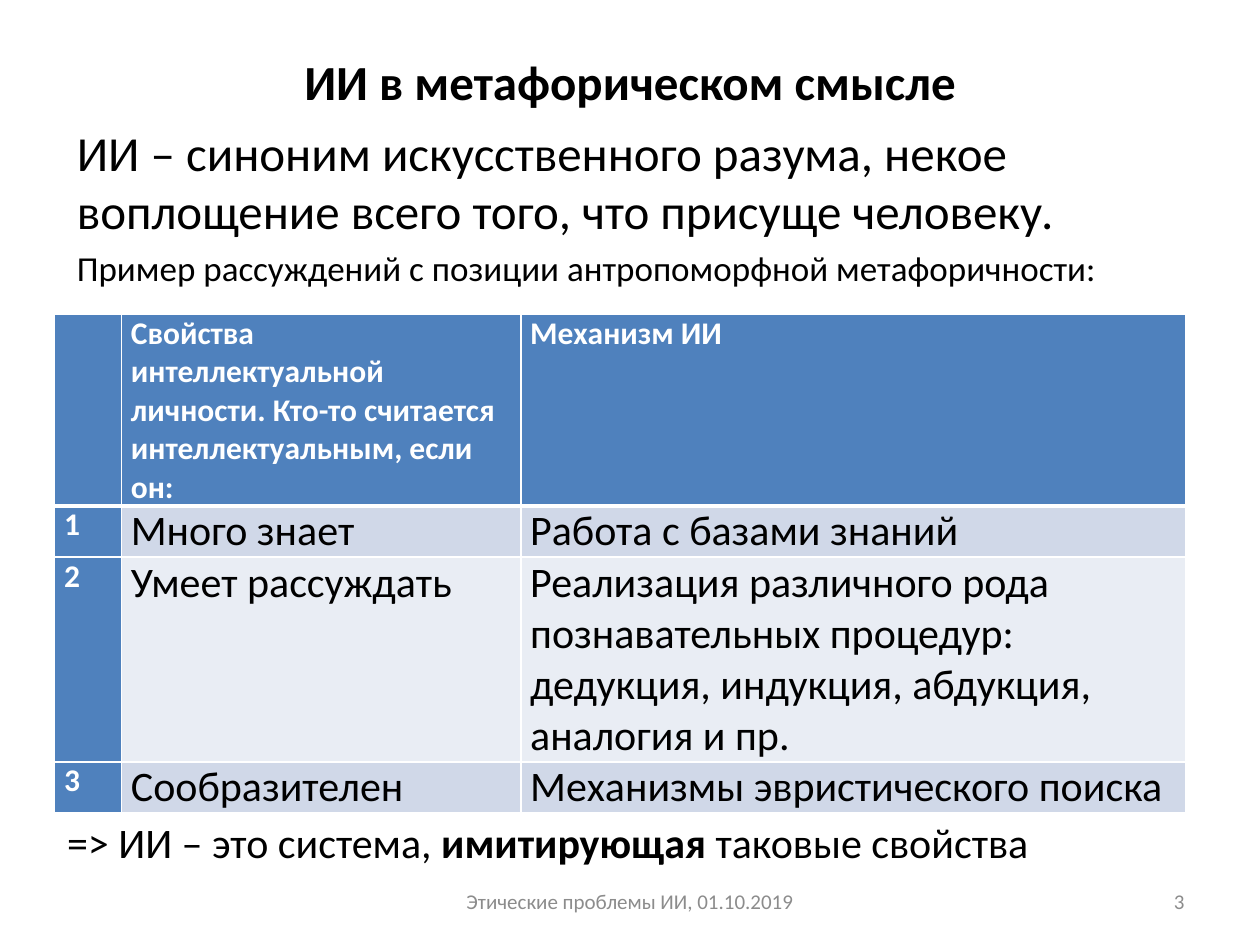
from lxml import etree
from pptx import Presentation
from pptx import util as u
from pptx.dml import color
from pptx.enum import text
from pptx.oxml import ns

FONT = "Calibri"
BLACK, WHITE, GREY, BLUE = "000000", "FFFFFF", "8C8C8C", "4F81BD"
BANDS = ("D0D8E8", "E9EDF4")
COLUMNS = (38.2, 228.2, 380)
ROWS = (
    (109.5, ("", "Свойства интеллектуальной личности. Кто-то считается интеллектуальным, если он:",
             "Механизм ИИ")),
    (29.3, ("1", "Много знает", "Работа с базами знаний")),
    (117, ("2", "Умеет рассуждать",
           "Реализация различного рода познавательных процедур: дедукция, индукция, "
           "абдукция, аналогия и пр.")),
    (29.3, ("3", "Сообразителен", "Механизмы эвристического поиска")),
)


def rgb(value):
    return color.RGBColor.from_string(value)


def add_run(p, content, size, fill=BLACK, bold=False):
    r = p.add_run()
    r.text = content
    r.font.name = FONT
    r.font.size = u.Pt(size)
    r.font.bold = bold
    r.font.color.rgb = rgb(fill)


def place(sp, left, top, width, height):
    sp.left, sp.top, sp.width, sp.height = map(u.Pt, (left, top, width, height))


def add_title(s, content):
    sp = s.shapes.title
    place(sp, 36, 21.6, 648, 49.7)
    tf = sp.text_frame
    tf.auto_size = text.MSO_AUTO_SIZE.NONE
    tf.vertical_anchor = text.MSO_ANCHOR.MIDDLE
    p = tf.paragraphs[0]
    p.alignment = text.PP_ALIGN.CENTER
    add_run(p, content, 28, bold=True)


def add_body(s, lines):
    sp = s.placeholders[1]
    place(sp, 36.7, 66.2, 648, 108)
    tf = sp.text_frame
    tf.auto_size = text.MSO_AUTO_SIZE.NONE
    for i, (content, size) in enumerate(lines):
        p = tf.add_paragraph() if i else tf.paragraphs[0]
        pPr = p._p.get_or_add_pPr()
        pPr.set("marL", "0")
        pPr.set("indent", "0")
        etree.SubElement(pPr, ns.qn("a:buNone"))
        add_run(p, content, size)


def add_text(s, box, runs, size, fill=BLACK, align=text.PP_ALIGN.LEFT,
             anchor=text.MSO_ANCHOR.TOP):
    tf = s.shapes.add_textbox(*map(u.Pt, box)).text_frame
    tf.word_wrap = True
    tf.vertical_anchor = anchor
    p = tf.paragraphs[0]
    p.alignment = align
    for content, bold in runs:
        add_run(p, content, size, fill, bold)


def set_borders(cell, widths):
    tcPr = cell._tc.get_or_add_tcPr()
    for i, (side, width) in enumerate(zip("LRTB", widths)):
        ln = etree.Element(ns.qn(f"a:ln{side}"), w=str(u.Pt(width)))
        solid = etree.SubElement(ln, ns.qn("a:solidFill"))
        etree.SubElement(solid, ns.qn("a:srgbClr"), val=WHITE)
        tcPr.insert(i, ln)


def fill_cell(cell, content, row, col):
    header = row == 0 or col == 0
    cell.margin_left = cell.margin_right = u.Pt(5.4)
    cell.margin_top = cell.margin_bottom = 0
    cell.fill.solid()
    cell.fill.fore_color.rgb = rgb(BLUE if header else BANDS[(row - 1) % 2])
    set_borders(cell, (1, 1, 3 if row == 1 else 1, 3 if row == 0 else 1))
    if content:
        add_run(cell.text_frame.paragraphs[0], content, 18 if header else 24,
                WHITE if header else BLACK, header)


def add_table(s, left, top):
    size = sum(COLUMNS), sum(height for height, _ in ROWS)
    table = s.shapes.add_table(len(ROWS), len(COLUMNS),
                               *map(u.Pt, (left, top, *size))).table
    table.first_col = True
    for column, width in zip(table.columns, COLUMNS):
        column.width = u.Pt(width)
    for i, (height, contents) in enumerate(ROWS):
        table.rows[i].height = u.Pt(height)
        for j, content in enumerate(contents):
            fill_cell(table.cell(i, j), content, i, j)


def main():
    prs = Presentation()
    prs.slide_width, prs.slide_height = u.Pt(720), u.Pt(540)
    s = prs.slides.add_slide(prs.slide_layouts[1])
    add_title(s, "ИИ в метафорическом смысле")
    add_body(s, (
        ("ИИ – синоним искусственного разума, некое воплощение всего того, "
         "что присуще человеку.", 28),
        ("Пример рассуждений с позиции антропоморфной метафоричности:", 20),
    ))
    middle = text.MSO_ANCHOR.MIDDLE
    add_text(s, (246, 500.5, 228, 28.8), [("Этические проблемы ИИ, 01.10.2019", False)],
             12, GREY, text.PP_ALIGN.CENTER, middle)
    add_text(s, (516, 500.5, 168, 28.8), [("3", False)],
             12, GREY, text.PP_ALIGN.RIGHT, middle)
    add_table(s, 31.2, 179.6)
    add_text(s, (31.2, 463, 635, 36), [
        ("=> ИИ – это система, ", False),
        ("имитирующая", True),
        (" таковые свойства", False),
    ], 24)
    prs.save("out.pptx")


if __name__ == "__main__":
    main()
